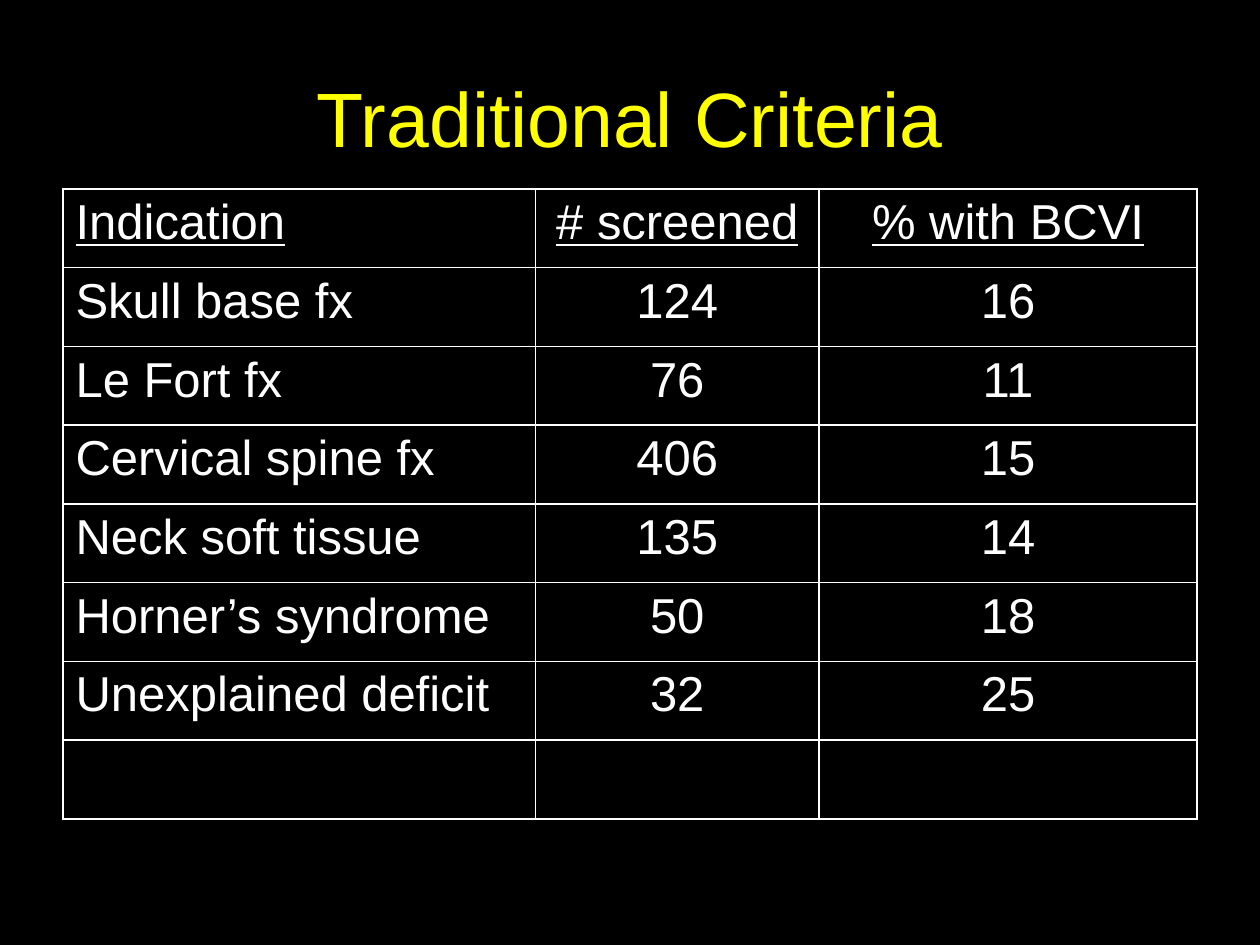
from dataclasses import dataclass

from pptx import Presentation
from pptx.dml.color import RGBColor
from pptx.enum.text import MSO_ANCHOR as Anchor, PP_ALIGN as Align
from pptx.util import Inches, Pt


@dataclass(frozen=True)
class Theme:
    font: str = "Arial"
    background: RGBColor = RGBColor(0, 0, 0)
    title: RGBColor = RGBColor(255, 255, 0)
    body: RGBColor = RGBColor(255, 255, 255)
    title_size: int = 44
    body_size: int = 28


class SlideBuilder:
    def __init__(self, prs, theme):
        self.theme = theme
        self.s = prs.slides.add_slide(prs.slide_layouts[6])
        fill = self.s.background.fill
        fill.solid()
        fill.fore_color.rgb = theme.background

    def add_text(self, tf, text, size, color, align, underline=False):
        p = tf.paragraphs[0]
        p.alignment = align
        r = p.add_run()
        r.text = text
        r.font.name = self.theme.font
        r.font.size = Pt(size)
        r.font.color.rgb = color
        r.font.underline = underline

    def title(self, text, left, top, width, height):
        sp = self.s.shapes.add_textbox(
            Inches(left), Inches(top), Inches(width), Inches(height))
        tf = sp.text_frame
        tf.word_wrap = True
        tf.vertical_anchor = Anchor.MIDDLE
        self.add_text(tf, text, self.theme.title_size, self.theme.title, Align.CENTER)

    def table(self, rows, left, top, widths, height):
        table = self.s.shapes.add_table(
            len(rows), len(widths), Inches(left), Inches(top),
            Inches(sum(widths)), Inches(height)).table
        table.first_row = table.horz_banding = False
        for column, width in zip(table.columns, widths):
            column.width = Inches(width)
        for i, row in enumerate(rows):
            table.rows[i].height = Inches(height / len(rows))
            for j, text in enumerate(row):
                cell = table.cell(i, j)
                cell.fill.solid()
                cell.fill.fore_color.rgb = self.theme.background
                if text:
                    align = Align.CENTER if j else Align.LEFT
                    self.add_text(cell.text_frame, text, self.theme.body_size,
                                  self.theme.body, align, underline=i == 0)


# Header, data and the empty closing row
CRITERIA = [
    ("Indication", "# screened", "% with BCVI"),
    ("Skull base fx", "124", "16"),
    ("Le Fort fx", "76", "11"),
    ("Cervical spine fx", "406", "15"),
    ("Neck soft tissue", "135", "14"),
    ("Horner’s syndrome", "50", "18"),
    ("Unexplained deficit", "32", "25"),
    ("", "", ""),
]


def main():
    prs = Presentation()
    prs.slide_width, prs.slide_height = Inches(10), Inches(7.5)
    slide = SlideBuilder(prs, Theme())

    # Title
    slide.title("Traditional Criteria", 0.5, 0.3, 9, 1.25)

    # Screening results
    slide.table(CRITERIA, 0.5, 1.5, (3.75, 2.25, 3), 5)

    prs.save("out.pptx")


if __name__ == "__main__":
    main()
